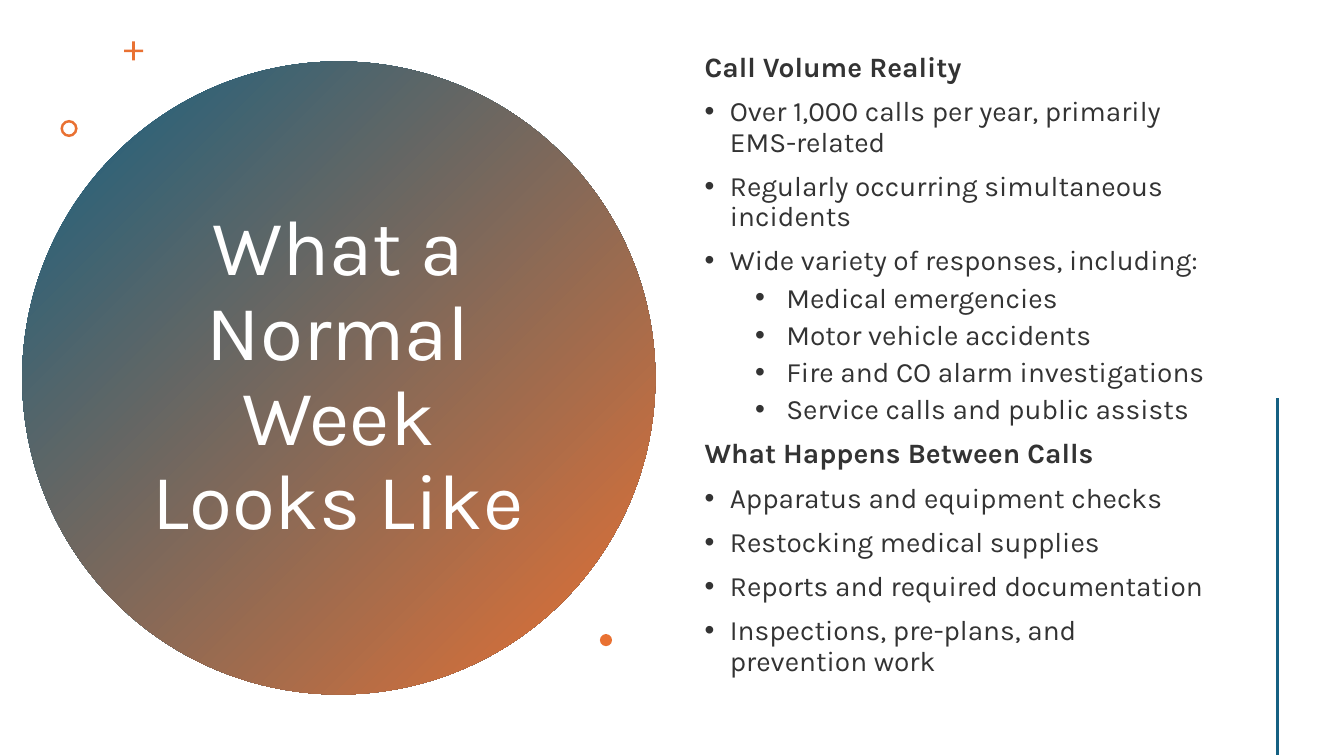
import pptx
import pptx.util
import pptx.dml.color
import pptx.enum.shapes
import pptx.enum.text
import pptx.oxml.ns
from lxml import etree

Inches = pptx.util.Inches
Pt = pptx.util.Pt
RGBColor = pptx.dml.color.RGBColor
SHAPE = pptx.enum.shapes.MSO_SHAPE
ANCHOR = pptx.enum.text.MSO_ANCHOR
ALIGN = pptx.enum.text.PP_ALIGN

BLUE = RGBColor(0x15, 0x60, 0x82)
ORANGE = RGBColor(0xE9, 0x71, 0x32)
WHITE = RGBColor(0xFF, 0xFF, 0xFF)
INK = RGBColor(0x33, 0x33, 0x33)

HEAD, ITEM, SUB = range(3)
BODY = [
    (HEAD, "Call Volume Reality"),
    (ITEM, "Over 1,000 calls per year, primarily EMS-related"),
    (ITEM, "Regularly occurring simultaneous incidents"),
    (ITEM, "Wide variety of responses, including:"),
    (SUB, "Medical emergencies"),
    (SUB, "Motor vehicle accidents"),
    (SUB, "Fire and CO alarm investigations"),
    (SUB, "Service calls and public assists"),
    (HEAD, "What Happens Between Calls"),
    (ITEM, "Apparatus and equipment checks"),
    (ITEM, "Restocking medical supplies"),
    (ITEM, "Reports and required documentation"),
    (ITEM, "Inspections, pre-plans, and prevention work"),
]


class Deck:
    face = "Karla"

    def __init__(self, slide):
        self.slide = slide

    def shape(self, kind, left, top, size, color=ORANGE, adjust=None):
        shape = self.slide.shapes.add_shape(
            kind, Inches(left), Inches(top), Inches(size), Inches(size))
        shape.shadow.inherit = False
        shape.line.fill.background()
        shape.fill.solid()
        shape.fill.fore_color.rgb = color
        if adjust is not None:
            shape.adjustments[0] = adjust
        return shape

    def disc(self, left, top, size, start, end):
        fill = self.shape(SHAPE.OVAL, left, top, size).fill
        fill.gradient()
        fill.gradient_angle = 315
        for stop, color, place in zip(fill.gradient_stops, (start, end), (0, 1)):
            stop.color.rgb = color
            stop.position = place

    def line(self, x, top, end, color, width):
        line = self.slide.shapes.add_connector(
            pptx.enum.shapes.MSO_CONNECTOR.STRAIGHT,
            Inches(x), Inches(top), Inches(x), Inches(end))
        line.line.color.rgb = color
        line.line.width = Pt(width)
        etree.SubElement(line._element.spPr, pptx.oxml.ns.qn("a:effectLst"))

    def frame(self, left, top, width, height, anchor):
        box = self.slide.shapes.add_textbox(
            Inches(left), Inches(top), Inches(width), Inches(height))
        frame = box.text_frame
        frame.word_wrap = True
        frame.vertical_anchor = anchor
        return frame

    def style(self, para, size, color, bold=False):
        para.line_spacing = 0.9
        font = para.font
        font.name = self.face
        font.size = Pt(size)
        font.color.rgb = color
        font.bold = bold

    def title(self, text, left, top, width, height):
        para = self.frame(left, top, width, height, ANCHOR.MIDDLE).paragraphs[0]
        para.text = text
        para.alignment = ALIGN.CENTER
        self.style(para, 56, WHITE)

    def bullet(self, para, kind):
        margin, hang = (0.81, 0.31) if kind == SUB else (0.25, 0.25)
        props = para._p.get_or_add_pPr()
        props.set("marL", str(Inches(margin)))
        props.set("indent", str(-Inches(hang)))
        if kind == HEAD:
            etree.SubElement(props, pptx.oxml.ns.qn("a:buNone"))
            return
        font = etree.SubElement(props, pptx.oxml.ns.qn("a:buFont"))
        font.set("typeface", "Arial")
        mark = etree.SubElement(props, pptx.oxml.ns.qn("a:buChar"))
        mark.set("char", "•")

    def body(self, rows, left, top, width, height):
        frame = self.frame(left, top, width, height, ANCHOR.TOP)
        frame.margin_top = 0
        for index, (kind, text) in enumerate(rows):
            para = frame.add_paragraph() if index else frame.paragraphs[0]
            para.text = text
            para.level = 1 if kind == SUB else 0
            self.bullet(para, kind)
            self.style(para, 20, INK, kind == HEAD)
            if index:
                para.space_before = Pt(5 if kind == SUB else 10)


def main():
    show = pptx.Presentation()
    show.slide_width = Inches(13.33)
    show.slide_height = Inches(7.5)
    deck = Deck(show.slides.add_slide(show.slide_layouts[6]))
    deck.disc(0.22, 0.61, 6.28, BLUE, ORANGE)
    deck.title("What a Normal Week Looks Like", 1.36, 1.41, 3.99, 4.67)
    deck.shape(SHAPE.CROSS, 1.23, 0.41, 0.19, adjust=0.43)
    deck.shape(SHAPE.DONUT, 0.6, 1.19, 0.17, adjust=0.15)
    deck.body(BODY, 6.89, 0.53, 5.22, 6.42)
    deck.shape(SHAPE.OVAL, 5.95, 6.29, 0.12)
    deck.line(12.67, 3.95, 7.49, BLUE, 2)
    show.save("out.pptx")


if __name__ == "__main__":
    main()
